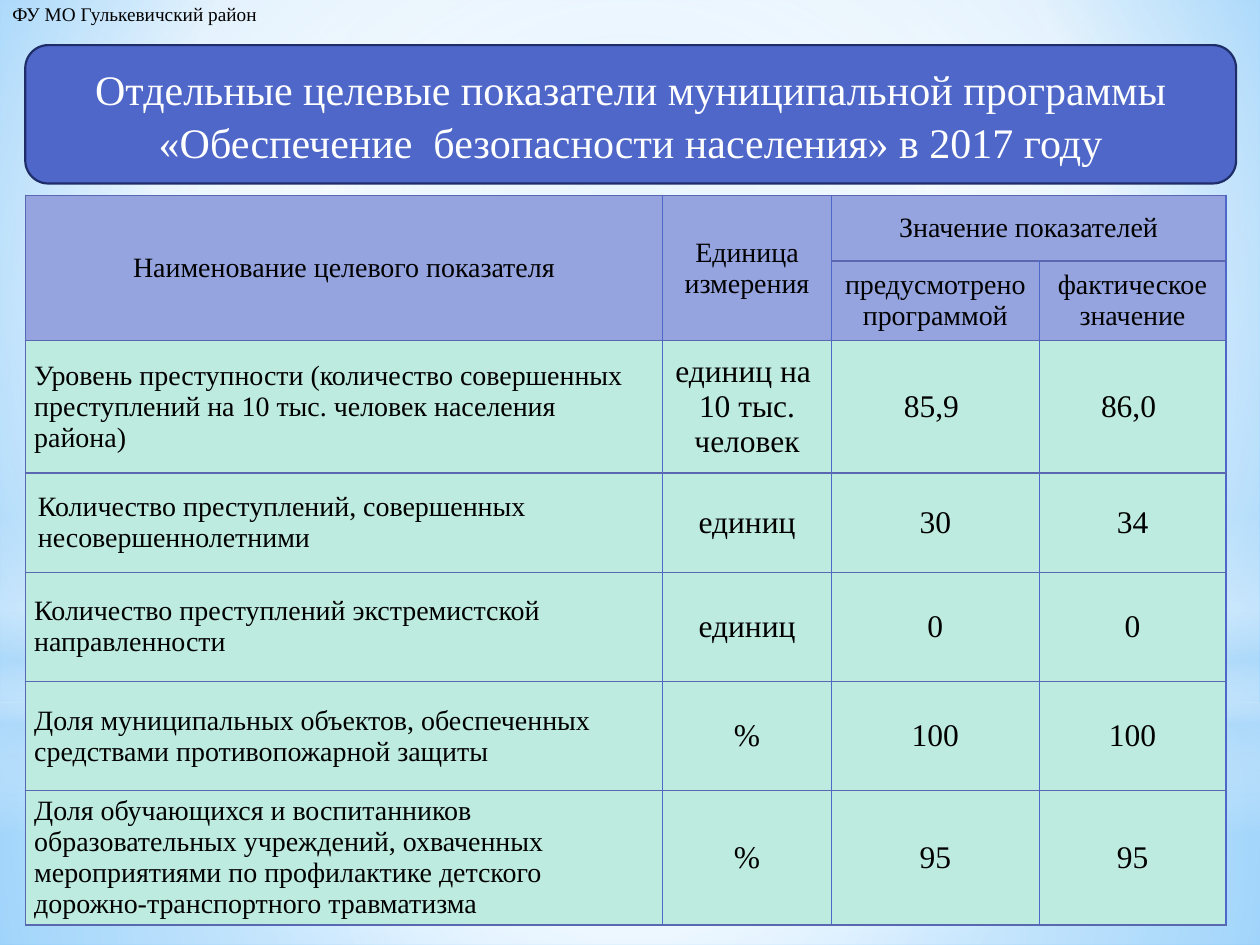
from pptx import Presentation, util as u
from pptx.dml.color import RGBColor
from pptx.enum import shapes, text
from pptx.oxml import parse_xml
from pptx.oxml.ns import nsdecls, qn

FONT = "Times New Roman"
BLACK, WHITE = "000000", "FFFFFF"
BLUE, NAVY, RULE = "4E67C8", "1F2E69", "5968B0"
HEADER_FILL, BODY_FILL = "95A4DE", "BEEBDF"
SKY = "B4DCFA"
CENTER, LEFT = text.PP_ALIGN.CENTER, text.PP_ALIGN.LEFT


def color(value):
    return RGBColor.from_string(value)


def gradient(stops, focus=None):
    """Stops are (position, colour, opacity); without a focus the gradient runs downwards."""
    marks = "".join(
        f'<a:gs pos="{pos * 1000}"><a:srgbClr val="{value}">'
        f'<a:alpha val="{opacity * 1000}"/></a:srgbClr></a:gs>'
        for pos, value, opacity in stops)
    if focus:
        sides = " ".join(f'{side}="{part * 1000}"' for side, part in zip("ltrb", focus))
        course = f'<a:path path="circle"><a:fillToRect {sides}/></a:path>'
    else:
        course = '<a:lin ang="5400000" scaled="0"/>'
    return parse_xml(f'<a:gradFill {nsdecls("a")} rotWithShape="1">'
                     f'<a:gsLst>{marks}</a:gsLst>{course}</a:gradFill>')


class SlideBuilder:
    def __init__(self, slide):
        self.slide = slide

    def add_lines(self, frame, lines, size, align=LEFT, ink=BLACK):
        for index, line in enumerate(lines):
            para = frame.paragraphs[0] if index == 0 else frame.add_paragraph()
            para.alignment = align
            span = para.add_run()
            span.text = line
            span.font.name, span.font.size = FONT, u.Pt(size)
            span.font.color.rgb = color(ink)

    def use_gradient(self, owner, fill, stops, focus):
        fill.solid()
        solid = owner.find(".//" + qn("a:solidFill"))
        solid.getparent().replace(solid, gradient(stops, focus))

    def background(self, stops, focus):
        self.use_gradient(self.slide.element, self.slide.background.fill, stops, focus)

    def shape(self, kind, place):
        box = self.slide.shapes.add_shape(kind, *map(u.Cm, place))
        box.shadow.inherit = False
        return box

    def glow(self, kind, place, stops, focus=None):
        box = self.shape(kind, place)
        box.line.fill.background()
        self.use_gradient(box.element, box.fill, stops, focus)

    def label(self, place, line, size):
        box = self.slide.shapes.add_textbox(*map(u.Cm, place))
        box.text_frame.word_wrap = False
        box.text_frame.auto_size = text.MSO_AUTO_SIZE.SHAPE_TO_FIT_TEXT
        self.add_lines(box.text_frame, [line], size)

    def title(self, place, line, size):
        panel = self.shape(shapes.MSO_SHAPE.ROUNDED_RECTANGLE, place)
        panel.fill.solid()
        panel.fill.fore_color.rgb = color(BLUE)
        panel.line.color.rgb = color(NAVY)
        panel.line.width = u.Pt(1.25)
        title = self.slide.shapes.title
        title.left, title.top, title.width, title.height = map(u.Cm, place)
        frame = title.text_frame
        frame.word_wrap = True
        frame.auto_size = text.MSO_AUTO_SIZE.NONE
        frame.vertical_anchor = text.MSO_ANCHOR.MIDDLE
        self.add_lines(frame, [line], size, CENTER, WHITE)
        frame.paragraphs[0].line_spacing = 1.05
        panel.element.addnext(title.element)  # text lies over its panel

    def table(self, left, top, widths, heights):
        frame = self.slide.shapes.add_table(
            len(heights), len(widths), u.Cm(left), u.Cm(top),
            u.Cm(sum(widths)), u.Cm(sum(heights)))
        table = frame.table
        for column, width in zip(table.columns, widths):
            column.width = u.Cm(width)
        for row, height in zip(table.rows, heights):
            row.height = u.Cm(height)
        return table

    def style_cell(self, cell, fill, edge):
        cell.fill.solid()
        cell.fill.fore_color.rgb = color(fill)
        cell.vertical_anchor = text.MSO_ANCHOR.MIDDLE
        properties = cell._tc.get_or_add_tcPr()
        for index, (side, ink) in enumerate(zip("LRTB", (edge, BLUE, RULE, RULE))):
            properties.insert(index, parse_xml(
                f'<a:ln{side} {nsdecls("a")} w="12700"><a:solidFill>'
                f'<a:srgbClr val="{ink}"/></a:solidFill></a:ln{side}>'))


HEADERS = {
    (0, 0): ["Наименование целевого показателя"],
    (0, 1): ["Единица", "измерения"],
    (0, 2): ["Значение показателей"],
    (1, 2): ["предусмотрено программой"],
    (1, 3): ["фактическое значение"],
}
INDICATORS = [
    ("Уровень преступности (количество совершенных преступлений на 10 тыс. "
     "человек населения района)",
     ["единиц на ", "10 тыс.", "человек"], "85,9 ", "86,0 "),
    ("Количество преступлений, совершенных несовершеннолетними", ["единиц"], "30", "34"),
    ("Количество преступлений экстремистской направленности", ["единиц"], "0", "0"),
    ("Доля муниципальных объектов, обеспеченных средствами противопожарной защиты",
     ["%"], "100", "100"),
    ("Доля обучающихся и воспитанников образовательных учреждений, охваченных "
     "мероприятиями по профилактике детского дорожно-транспортного травматизма",
     ["%"], "95", "95"),
]
WIDE_MARGIN_ROW = 3


def main():
    deck = Presentation()
    deck.slide_width, deck.slide_height = u.Cm(25.4), u.Cm(19.05)
    page = SlideBuilder(deck.slides.add_slide(deck.slide_layouts[5]))

    # Sky background with soft light
    rectangle, oval = shapes.MSO_SHAPE.RECTANGLE, shapes.MSO_SHAPE.OVAL
    middle = (50, 50, 50, 50)
    page.background([(0, "9ED5FF", 100), (60, WHITE, 100), (100, "5BB9FF", 100)],
                    (20, 10, 20, 60))
    page.glow(rectangle, (0, 14.17, 25.4, 4.88),
              [(0, WHITE, 91), (37, WHITE, 76), (100, SKY, 79)], middle)
    page.glow(rectangle, (0, 0, 25.4, 14.17),
              [(0, WHITE, 89), (48, WHITE, 62), (100, SKY, 79)], middle)
    page.glow(rectangle, (0, 10.46, 25.4, 6.35),
              [(0, WHITE, 0), (29, WHITE, 30), (45, SKY, 40),
               (55, WHITE, 26), (65, SKY, 60), (100, WHITE, 0)])
    page.glow(oval, (0, 4.45, 25.4, 14.17), [(0, WHITE, 100), (56, WHITE, 0)], middle)

    # Department name
    page.label((0, -0.08, 5.54, 0.74), "ФУ МО Гулькевичский район", 11)

    # Table of indicators
    table = page.table(0.51, 3.94, (12.85, 3.4, 4.19, 3.76),
                       (1.32, 1.6, 2.67, 2, 2.2, 2.2, 2.7))
    for row in range(len(table.rows)):
        for column in range(len(table.columns)):
            cell = table.cell(row, column)
            page.style_cell(cell, HEADER_FILL if row < 2 else BODY_FILL,
                            BLUE if column else RULE)
            if row >= 2 and row != WIDE_MARGIN_ROW:
                cell.margin_left = cell.margin_right = u.Cm(0.18)
                cell.margin_top = cell.margin_bottom = 0
    for start, end in (((0, 0), (1, 0)), ((0, 1), (1, 1)), ((0, 2), (0, 3))):
        table.cell(*start).merge(table.cell(*end))
    for place, lines in HEADERS.items():
        page.add_lines(table.cell(*place).text_frame, lines, 16, CENTER)
    for row, (name, unit, planned, actual) in enumerate(INDICATORS, start=2):
        page.add_lines(table.cell(row, 0).text_frame, [name], 16)
        for column, lines in enumerate((unit, [planned], [actual]), start=1):
            page.add_lines(table.cell(row, column).text_frame, lines, 18, CENTER)

    # Title on its rounded panel
    page.title((0.51, 0.91, 24.41, 2.79),
               "Отдельные целевые показатели муниципальной программы "
               "«Обеспечение  безопасности населения» в 2017 году", 24)

    deck.save("out.pptx")


if __name__ == "__main__":
    main()
